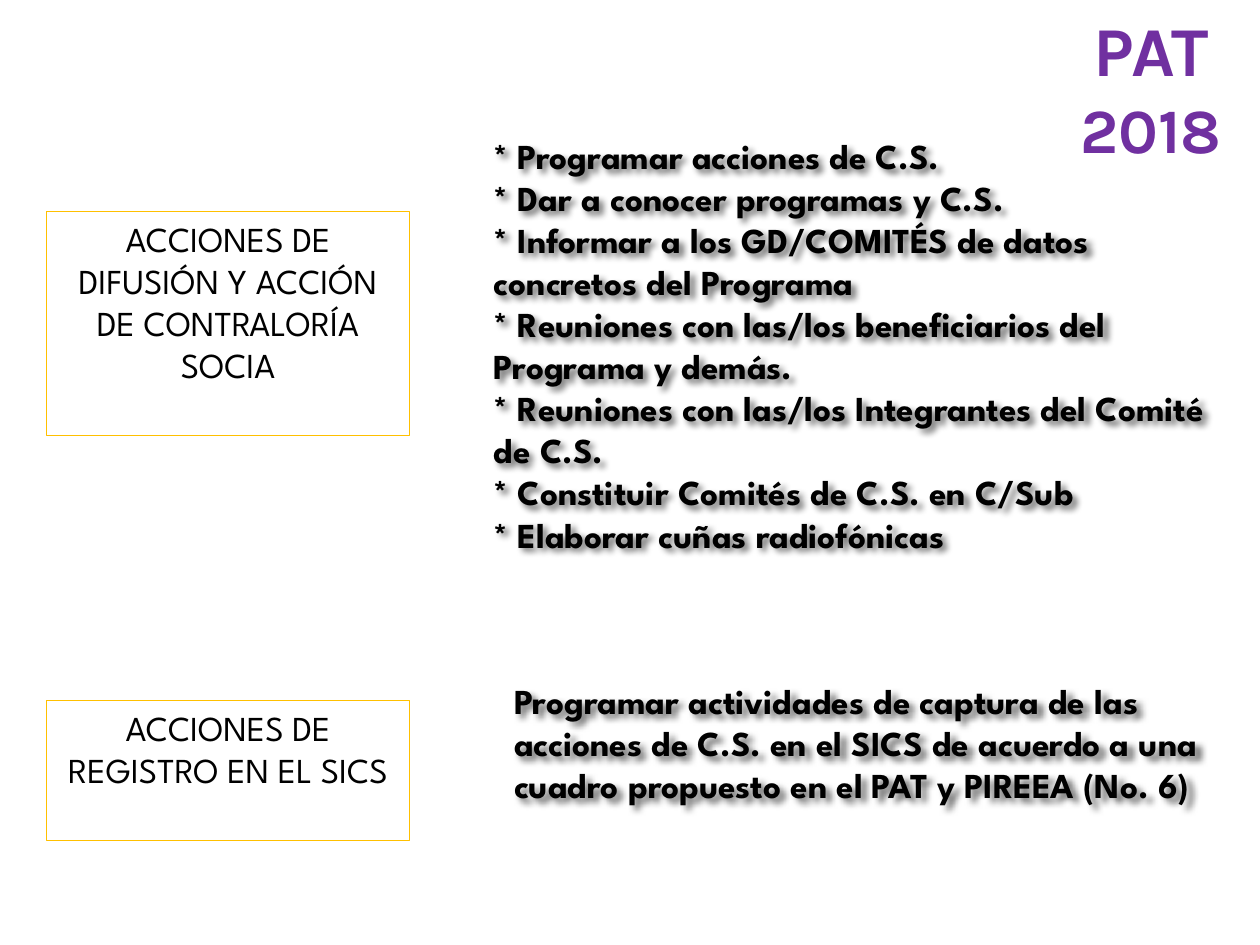
from lxml.etree import SubElement
from pptx import Presentation
from pptx.dml.color import RGBColor
from pptx.enum.shapes import MSO_SHAPE
from pptx.enum.text import MSO_ANCHOR, MSO_AUTO_SIZE, PP_ALIGN
from pptx.oxml.ns import qn
from pptx.util import Inches, Pt

WIDTH, HEIGHT = 10, 7.5
LABEL_LEFT, LABEL_WIDTH = 0.37, 2.88
DIFFUSION_ACTIONS = [
    "* Programar acciones de C.S.",
    "* Dar a conocer programas y C.S.",
    "* Informar a los GD/COMITÉS de datos concretos del Programa",
    "* Reuniones con las/los beneficiarios del Programa y demás.",
    "* Reuniones con las/los Integrantes del Comité de C.S.",
    "* Constituir Comités de C.S. en C/Sub",
    "* Elaborar cuñas radiofónicas",
]
REGISTRY_ACTIONS = [
    "Programar actividades de captura de las acciones de C.S. en el SICS "
    "de acuerdo a una cuadro propuesto en el PAT y PIREEA (No. 6)",
]


def color(value):
    return RGBColor.from_string(value)


def place(shape, box):
    shape.left, shape.top, shape.width, shape.height = map(Inches, box)


def prepare_frame(shape):
    frame = shape.text_frame
    frame.word_wrap = True
    frame.auto_size = MSO_AUTO_SIZE.SHAPE_TO_FIT_TEXT
    frame.vertical_anchor = MSO_ANCHOR.TOP
    return frame


def add_run(paragraph, text, size=20, font="League Spartan", fill="000000", bold=False):
    run = paragraph.add_run()
    run.text = text
    run.font.name = font
    run.font.size = Pt(size)
    run.font.bold = bold
    run.font.color.rgb = color(fill)


def add_text_shadow(shape):
    shape.fill.background()
    shape.shadow.inherit = False
    effects = shape.element.spPr.find(qn("a:effectLst"))
    shadow = SubElement(effects, qn("a:outerShdw"), blurRad="50800", dist="38100",
                        dir="2700000", algn="tl", rotWithShape="0")
    shade = SubElement(shadow, qn("a:srgbClr"), val="000000")
    SubElement(shade, qn("a:alpha"), val="60000")


def fill_title(title, box):
    place(title, box)
    paragraph = prepare_frame(title).paragraphs[0]
    paragraph.alignment = PP_ALIGN.CENTER
    for text, size in (("PAT", 40), (" 2018", 36)):
        add_run(paragraph, text, size, "Karla", "7030A0", True)


def add_label(slide, box, text):
    label = slide.shapes.add_shape(MSO_SHAPE.RECTANGLE, *map(Inches, box))
    label.shadow.inherit = False
    label.fill.background()
    label.line.color.rgb = color("FFC000")
    label.line.width = Pt(0.5)
    paragraph = prepare_frame(label).paragraphs[0]
    paragraph.alignment = PP_ALIGN.CENTER
    add_run(paragraph, text)


def fill_actions(body, box, actions):
    place(body, box)
    add_text_shadow(body)
    frame = prepare_frame(body)
    for index, action in enumerate(actions):
        paragraph = frame.add_paragraph() if index else frame.paragraphs[0]
        properties = paragraph._p.get_or_add_pPr()
        properties.set("marL", "0")
        properties.set("indent", "0")
        SubElement(properties, qn("a:buNone"))
        paragraph.space_before = Pt(0)
        add_run(paragraph, action, bold=True)


def main():
    presentation = Presentation()
    presentation.slide_width, presentation.slide_height = Inches(WIDTH), Inches(HEIGHT)
    slide = presentation.slides.add_slide(presentation.slide_layouts[3])
    title, diffusion, registry = slide.placeholders
    fill_title(title, (8.27, 0, WIDTH - 8.27, 1.38))
    add_label(slide, (LABEL_LEFT, 1.68, LABEL_WIDTH, 1.78),
              "ACCIONES DE DIFUSIÓN Y ACCIÓN DE CONTRALORÍA SOCIA")
    add_label(slide, (LABEL_LEFT, 5.56, LABEL_WIDTH, 1.11),
              "ACCIONES DE REGISTRO EN EL SICS")
    fill_actions(diffusion, (3.82, 1.02, 5.95, 3.8), DIFFUSION_ACTIONS)
    fill_actions(registry, (3.98, 5.34, 5.78, 1.45), REGISTRY_ACTIONS)
    presentation.save("out.pptx")


if __name__ == "__main__":
    main()
